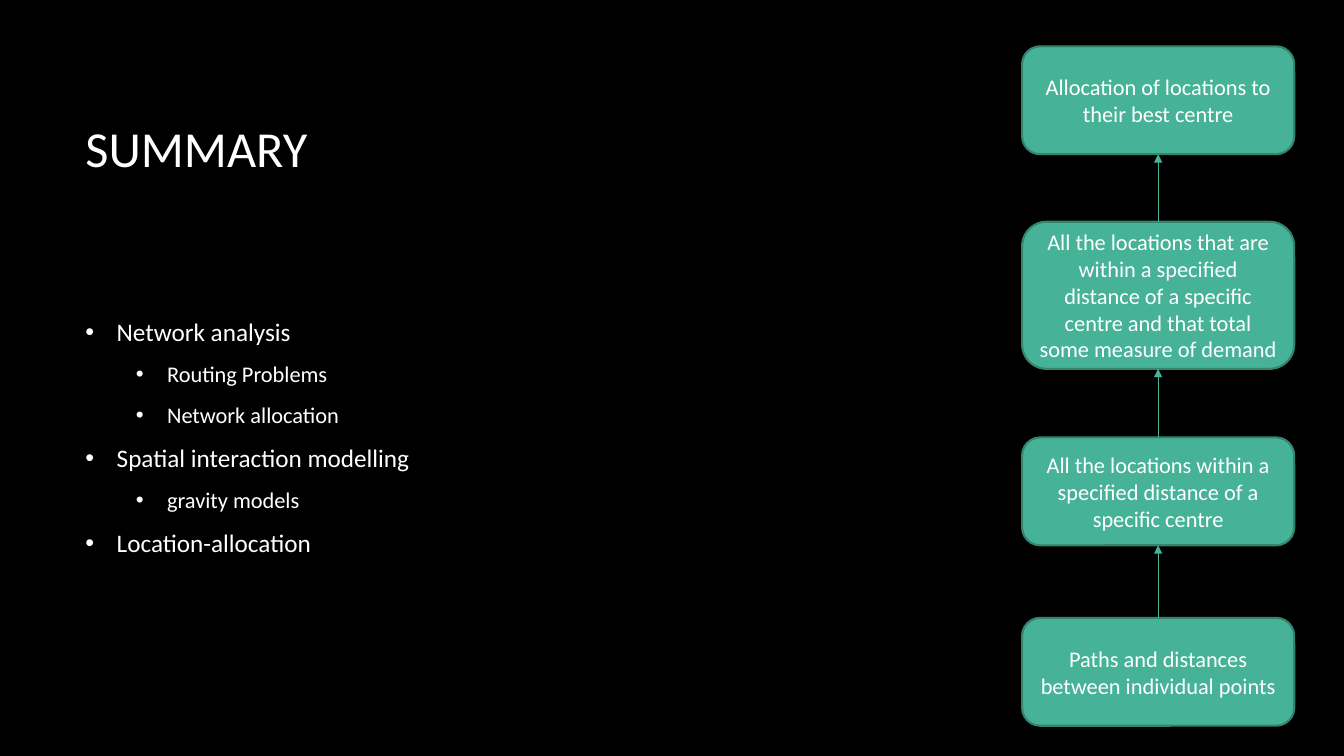
from itertools import pairwise

from lxml import etree
from pptx import Presentation
from pptx.dml.color import RGBColor
from pptx.enum.shapes import MSO_CONNECTOR, MSO_SHAPE
from pptx.enum.text import MSO_ANCHOR, PP_ALIGN
from pptx.oxml.ns import qn
from pptx.util import Inches, Pt

BLACK = RGBColor(0x00, 0x00, 0x00)
WHITE = RGBColor(0xFF, 0xFF, 0xFF)
GREEN = RGBColor(0x46, 0xB2, 0x98)
EDGE = RGBColor(0x34, 0x84, 0x70)
ROUND = MSO_SHAPE.ROUNDED_RECTANGLE
LINE = MSO_CONNECTOR.STRAIGHT
MIDDLE = MSO_ANCHOR.MIDDLE
CENTER = PP_ALIGN.CENTER

FONT = "Calibri"
WIDE, HIGH = Inches(13.333), Inches(7.5)
COL, ROW = WIDE / 40, HIGH / 30
TOP_SITE, LOW_SITE = 0, 2

TOPICS = [
    (0, "Network analysis"),
    (1, "Routing Problems"),
    (1, "Network allocation"),
    (0, "Spatial interaction modelling"),
    (1, "gravity models"),
    (0, "Location-allocation"),
]
STEPS = [
    (24.52, 4.28, "Paths and distances between individual points"),
    (17.36, 4.28, "All the locations within a specified distance of a specific centre"),
    (8.8, 5.84, "All the locations that are within a specified distance of a "
                "specific centre and that total some measure of demand"),
    (1.84, 4.28, "Allocation of locations to their best centre"),
]


def place(left, top, wide, high):
    return [round(n) for n in (left * COL, top * ROW, wide * COL, high * ROW)]


def add_run(para, text, size):
    run = para.add_run()
    run.text = text
    run.font.name = FONT
    run.font.size = Pt(size)
    run.font.color.rgb = WHITE


def set_frame(shape):
    frame = shape.text_frame
    frame.word_wrap = True
    frame.vertical_anchor = MIDDLE
    return frame


def add_box(slide, *grid):
    return set_frame(slide.shapes.add_textbox(*place(*grid)))


def add_bullet(para, level):
    props = para._p.get_or_add_pPr()
    props.set("marL", str(Inches(0.31 + 0.5 * level)))
    props.set("indent", str(Inches(-0.31)))
    tint = etree.SubElement(props, qn("a:buClr"))
    etree.SubElement(tint, qn("a:srgbClr"), val=str(WHITE))
    etree.SubElement(props, qn("a:buFont"), typeface="Arial")
    etree.SubElement(props, qn("a:buChar"), char="•")


def add_list(frame, topics):
    for spot, (level, text) in enumerate(topics):
        para = frame.add_paragraph() if spot else frame.paragraphs[0]
        add_bullet(para, level)
        para.level = level
        para.space_after = Pt(10)
        add_run(para, text, 18 - 2 * level)


def add_step(slide, top, high, text):
    step = slide.shapes.add_shape(ROUND, *place(30.42, top, 8.1, high))
    step.shadow.inherit = False
    step.fill.solid()
    step.fill.fore_color.rgb = GREEN
    step.line.color.rgb = EDGE
    step.line.width = Pt(1.5)
    para = set_frame(step).paragraphs[0]
    para.alignment = CENTER
    add_run(para, text, 16)
    return step


def add_arrow(slide, low, high):
    arrow = slide.shapes.add_connector(LINE, 0, 0, 0, 0)
    arrow.begin_connect(low, TOP_SITE)
    arrow.end_connect(high, LOW_SITE)
    arrow.line.color.rgb = GREEN
    arrow.line.width = Pt(0.75)
    etree.SubElement(arrow.line._get_or_add_ln(), qn("a:tailEnd"), type="triangle")
    etree.SubElement(arrow._element.spPr, qn("a:effectLst"))


def main():
    deck = Presentation()
    deck.slide_width, deck.slide_height = WIDE, HIGH
    slide = deck.slides.add_slide(deck.slide_layouts[6])
    slide.background.fill.solid()
    slide.background.fill.fore_color.rgb = BLACK

    title = add_box(slide, 2.25, 2.68, 9.69, 6.36)
    add_run(title.paragraphs[0], "SUMMARY", 36)
    add_list(add_box(slide, 2.25, 9.36, 33.24, 15.96), TOPICS)

    steps = [add_step(slide, *step) for step in STEPS]
    for low, high in pairwise(steps):
        add_arrow(slide, low, high)

    deck.save("out.pptx")


if __name__ == "__main__":
    main()
